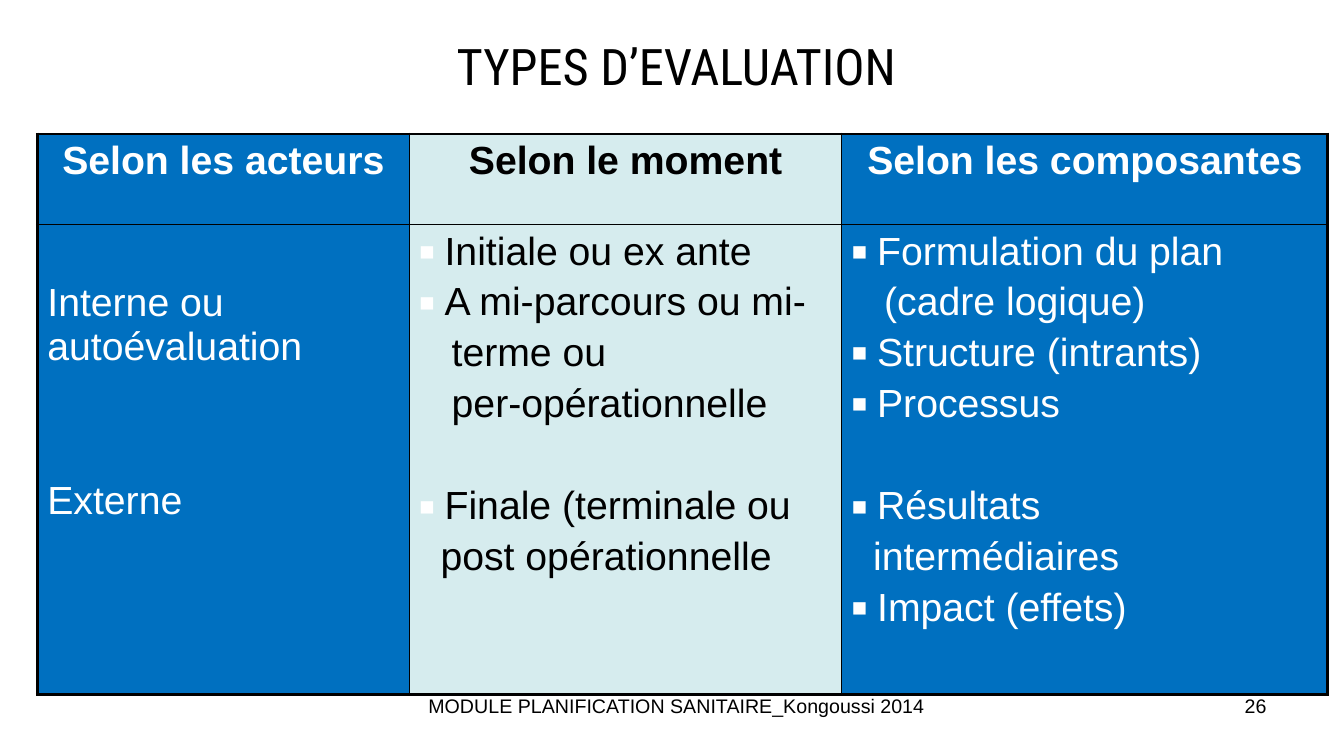
from lxml.etree import SubElement
from pptx import Presentation
from pptx.dml.color import RGBColor
from pptx.enum.text import MSO_ANCHOR, PP_ALIGN
from pptx.oxml.ns import qn
from pptx.util import Inches, Pt

COLORS = {"black": "000000", "white": "FFFFFF", "blue": "0070C0", "pale": "D6ECEE"}
LINE_GAP = 5
BLANK_LINE_GAP = 42


def write(paragraph, text, size=28, font="Arial", color="black", bold=False,
          align=PP_ALIGN.LEFT, before=0, indent=0, bullet=False):
    paragraph.alignment = align
    paragraph.space_before = Pt(before)
    run = paragraph.add_run()
    run.text = text
    run.font.size = Pt(size)
    run.font.name = font
    run.font.bold = bold
    run.font.color.rgb = RGBColor.from_string(COLORS[color])
    properties = paragraph._p.get_or_add_pPr()
    properties.set("marL", str(Inches(indent)))
    properties.set("indent", str(-Inches(indent) if bullet else 0))
    if bullet:
        bullet_color = SubElement(properties, qn("a:buClr"))
        SubElement(bullet_color, qn("a:srgbClr"), val=COLORS["white"])
        SubElement(properties, qn("a:buSzPct"), val="65000")
        SubElement(properties, qn("a:buFont"), typeface="Arial")
        SubElement(properties, qn("a:buChar"), char="■")
    else:
        SubElement(properties, qn("a:buNone"))


def style_cell(cell, fill, borders):
    cell_properties = cell._tc.get_or_add_tcPr()
    for side, width in borders.items():
        line = SubElement(cell_properties, qn(f"a:ln{side}"), w=str(Pt(width)))
        line_fill = SubElement(line, qn("a:solidFill"))
        SubElement(line_fill, qn("a:srgbClr"), val=COLORS["black"])
    cell.fill.solid()
    cell.fill.fore_color.rgb = RGBColor.from_string(COLORS[fill])
    cell.margin_left = cell.margin_right = Inches(0.1)
    cell.margin_top = cell.margin_bottom = Inches(0.05)


presentation = Presentation()
presentation.slide_width = Inches(13.33)
presentation.slide_height = Inches(7.5)
slide = presentation.slides.add_slide(presentation.slide_layouts[5])

title = slide.shapes.title
title.left, title.top = Inches(2.21), Inches(0.25)
title.width, title.height = Inches(9), Inches(0.79)
title.text_frame.vertical_anchor = MSO_ANCHOR.MIDDLE
write(title.text_frame.paragraphs[0], "TYPES D’EVALUATION", size=36,
      font="Roboto Condensed", align=PP_ALIGN.CENTER)

footers = [
    ("MODULE PLANIFICATION SANITAIRE_Kongoussi 2014", 2.92, 7.58, PP_ALIGN.CENTER),
    ("26", 9.55, 3.11, PP_ALIGN.RIGHT),
]
for text, left, width, align in footers:
    footer = slide.shapes.add_textbox(Inches(left), Inches(6.83), Inches(width), Inches(0.52))
    footer.text_frame.word_wrap = True
    write(footer.text_frame.paragraphs[0], text, size=14, align=align)

plain = {"indent": 0}
item = {"indent": 0.25, "bullet": True}
deep = {"indent": 0.32}
shallow = {"indent": 0.21}
after_blank = {"before": BLANK_LINE_GAP}
columns = [
    ("Selon les acteurs", 3.69, "blue", "white", [
        ("Interne ou autoévaluation", plain),
        ("Externe", plain | {"before": 2 * BLANK_LINE_GAP - LINE_GAP}),
    ]),
    ("Selon le moment", 4.29, "pale", "black", [
        ("Initiale ou ex ante", item),
        ("A mi-parcours ou mi-", item),
        ("terme ou", deep),
        ("per-opérationnelle", deep),
        ("Finale (terminale ou", item | after_blank),
        ("post opérationnelle", shallow),
    ]),
    ("Selon les composantes", 4.82, "blue", "white", [
        ("Formulation du plan", item),
        ("(cadre logique)", deep),
        ("Structure (intrants)", item),
        ("Processus", item),
        ("Résultats", item | after_blank),
        ("intermédiaires", shallow),
        ("Impact (effets)", item),
    ]),
]
table_frame = slide.shapes.add_table(2, len(columns), Inches(0.37), Inches(1.33),
                                     Inches(12.8), Inches(5.56))
table = table_frame.table
table.first_row = table.horz_banding = False
table.rows[0].height = Inches(0.9)
table.rows[1].height = Inches(4.66)

for index, (heading, width, fill, color, lines) in enumerate(columns):
    table.columns[index].width = Inches(width)
    header, body = table.cell(0, index), table.cell(1, index)
    sides = {"L": 2.25 if index == 0 else 1, "R": 2.25 if index == len(columns) - 1 else 1}
    style_cell(header, fill, sides | {"T": 2.25, "B": 1})
    style_cell(body, fill, sides | {"T": 1, "B": 2.25})
    write(header.text_frame.paragraphs[0], heading, color=color, bold=True,
          align=PP_ALIGN.CENTER)
    for number, (text, options) in enumerate(lines):
        frame = body.text_frame
        paragraph = frame.add_paragraph() if number else frame.paragraphs[0]
        spacing = {"before": LINE_GAP if number else 0}
        write(paragraph, text, color=color, **(spacing | options))

table.cell(1, 0).margin_top = Inches(0.56)

presentation.save("out.pptx")
